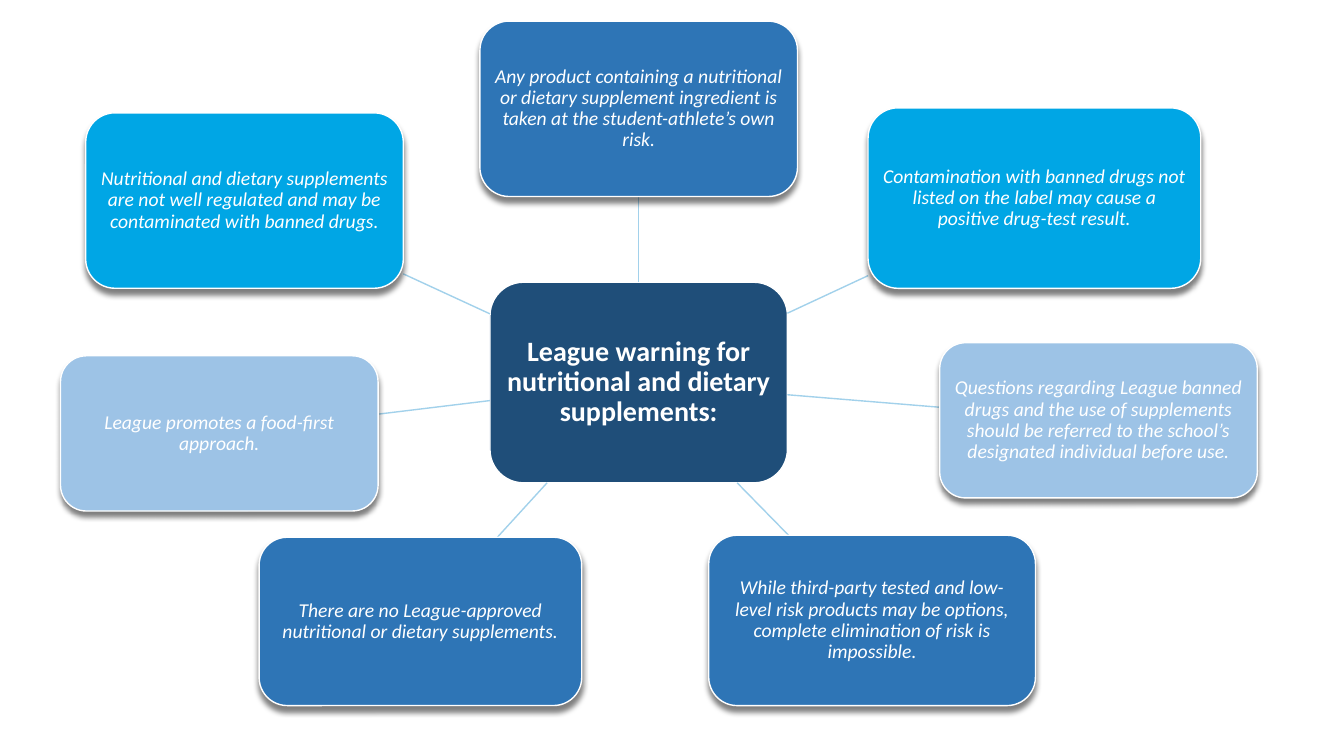
from lxml import etree
from pptx import Presentation
from pptx.dml.color import RGBColor
from pptx.enum.shapes import MSO_CONNECTOR, MSO_SHAPE
from pptx.enum.text import MSO_ANCHOR, PP_ALIGN
from pptx.oxml import parse_xml
from pptx.oxml.ns import nsdecls, qn
from pptx.util import Pt

PX = 9144  # EMU per px, 100 px to the inch

WHITE = RGBColor(0xFF, 0xFF, 0xFF)
NAVY = RGBColor(0x1F, 0x4E, 0x79)
BLUE = RGBColor(0x2E, 0x75, 0xB6)
CYAN = RGBColor(0x00, 0xA6, 0xE5)
PALE = RGBColor(0x9D, 0xC3, 0xE6)
SPOKE = RGBColor(0xA2, 0xD1, 0xEB)

# Boxes are (left, top, width, height) in px
HUB_BOX = (486, 280, 295, 199)
HUB_TEXT = "League warning for nutritional and dietary supplements:"
TOP_WARNING = ((476, 21, 315, 174), BLUE,
               "Any product containing a nutritional or dietary supplement "
               "ingredient is taken at the student-athlete’s own risk.")
WARNINGS = [
    TOP_WARNING,
    ((861, 107, 330, 179), CYAN,
     "Contamination with banned drugs not listed on the label may cause "
     "a positive drug-test result."),
    ((932, 340, 315, 154), PALE,
     "Questions regarding League banned drugs and the use of supplements should "
     "be referred to the school’s designated individual before use."),
    ((703, 531, 324, 169), BLUE,
     "While third-party tested and low-level risk products may be options, "
     "complete elimination of risk is impossible."),
    ((257, 533, 320, 167), BLUE,
     "There are no League-approved nutritional or dietary supplements."),
    ((60, 353, 315, 154), PALE, "League promotes a food-first approach."),
    ((85, 112, 315, 174), CYAN,
     "Nutritional and dietary supplements are not well regulated and may be "
     "contaminated with banned drugs."),
]

SHADOW_XML = (
    f'<a:effectLst {nsdecls("a")}>'
    '<a:outerShdw blurRad="50800" dist="50800" dir="5400000" rotWithShape="0">'
    '<a:srgbClr val="000000"><a:alpha val="50000"/></a:srgbClr>'
    '</a:outerShdw></a:effectLst>')


def edge_point(box, other):
    """Where the line between the two box centres leaves the first box."""
    left, top, width, height = box
    center_x, center_y = left + width / 2, top + height / 2
    run = other[0] + other[2] / 2 - center_x
    rise = other[1] + other[3] / 2 - center_y
    share = 1 / max(abs(run) * 2 / width, abs(rise) * 2 / height)
    return (round((center_x + run * share) * PX),
            round((center_y + rise * share) * PX))


def add_box(slide, box, fill, text, size, margin):
    shape = slide.shapes.add_shape(MSO_SHAPE.ROUNDED_RECTANGLE,
                                   *(value * PX for value in box))
    shape.shadow.inherit = False
    shape.fill.solid()
    shape.fill.fore_color.rgb = fill
    shape.line.color.rgb = WHITE
    shape.line.width = Pt(1)
    frame = shape.text_frame
    frame.word_wrap = True
    frame.vertical_anchor = MSO_ANCHOR.MIDDLE
    frame.margin_left = frame.margin_right = margin * PX
    frame.margin_top = frame.margin_bottom = margin * PX
    frame.text = text
    paragraph = frame.paragraphs[0]
    paragraph.alignment = PP_ALIGN.CENTER
    paragraph.line_spacing = 0.9
    font = paragraph.runs[0].font
    font.name = "Calibri"
    font.size = Pt(size)
    font.color.rgb = WHITE
    return shape


def add_warning(slide, box, fill, text):
    shape = add_box(slide, box, fill, text, 14, 6)
    shape.text_frame.paragraphs[0].runs[0].font.italic = True
    properties = shape.element.spPr
    properties.replace(properties.find(qn("a:effectLst")), parse_xml(SHADOW_XML))
    return shape


def add_spoke(slide, box):
    spoke = slide.shapes.add_connector(
        MSO_CONNECTOR.STRAIGHT, *edge_point(HUB_BOX, box), *edge_point(box, HUB_BOX))
    spoke.line.color.rgb = SPOKE
    spoke.line.width = Pt(1)
    etree.SubElement(spoke.element.spPr, qn("a:effectLst"))
    return spoke


def main():
    presentation = Presentation()
    presentation.slide_width = 1333 * PX
    presentation.slide_height = 750 * PX
    slide = presentation.slides.add_slide(presentation.slide_layouts[6])

    hub = add_box(slide, HUB_BOX, NAVY, HUB_TEXT, 20, 4)
    hub.text_frame.paragraphs[0].runs[0].font.bold = True
    for warning in WARNINGS:
        spoke = add_spoke(slide, warning[0])
        shape = add_warning(slide, *warning)
        if warning is TOP_WARNING:
            spoke.begin_connect(hub, 0)
            spoke.end_connect(shape, 2)

    presentation.save("out.pptx")


if __name__ == "__main__":
    main()
